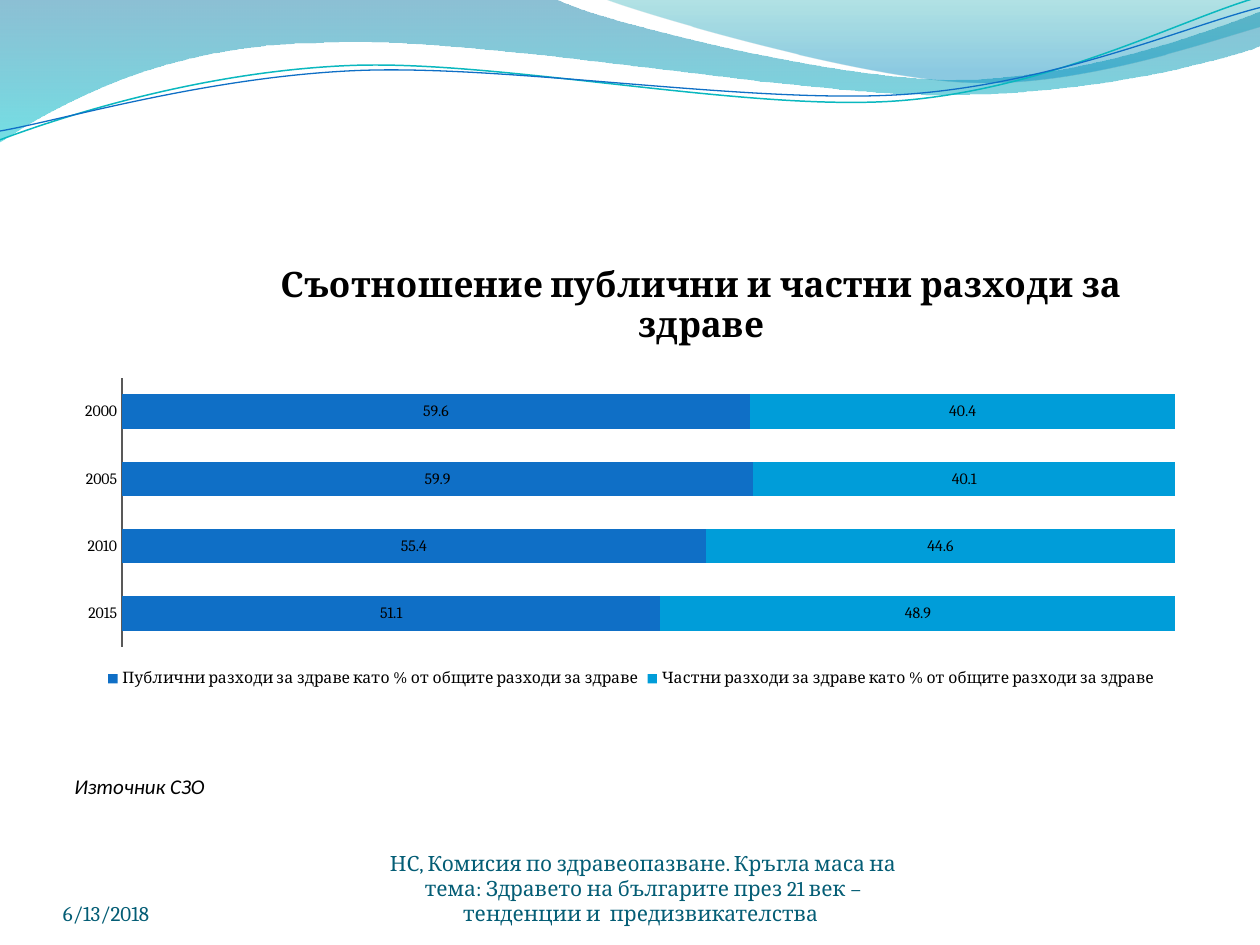
from math import cos, radians, sin

from lxml.etree import SubElement
from pptx import Presentation
from pptx.chart.data import CategoryChartData
from pptx.dml.color import RGBColor
from pptx.enum.chart import XL_CHART_TYPE, XL_LABEL_POSITION, XL_LEGEND_POSITION, XL_TICK_LABEL_POSITION, XL_TICK_MARK
from pptx.enum.text import MSO_ANCHOR, PP_ALIGN
from pptx.oxml import parse_xml
from pptx.oxml.ns import nsdecls, qn
from pptx.util import Inches, Pt

WIDTH, HEIGHT = 10, 7.5
BLACK, TEAL = "000000", "045D75"
SOURCE = "Източник СЗО"
FOOTERS = [
    ("6/13/2018", 0.05, 0.233, PP_ALIGN.LEFT),
    ("НС, Комисия по здравеопазване. Кръгла маса на тема: Здравето на българите "
     "през 21 век – тенденции и  предизвикателства ", 0.292, 0.437, PP_ALIGN.CENTER),
]
CHART_TITLE = "Съотношение публични и частни разходи за здраве"
YEARS = ["2000", "2005", "2010", "2015"]
SERIES = [
    ("Публични разходи за здраве като % от общите разходи за здраве", "0F6FC6", [59.6, 59.9, 55.4, 51.1]),
    ("Частни разходи за здраве като % от общите разходи за здраве", "009DD9", [40.4, 40.1, 44.6, 48.9]),
]
TITLE_PLACE = {"x": 0.186, "y": 0.007}
PLOT_PLACE = {"x": 0.052, "y": 0.286, "w": 0.928, "h": 0.61}
BANDS = [
    ([(0, -0.01), (4.4, -0.01), (4.76, 0.17, 6.64, 0.63, 7.58, 0.63), (8.53, 0.63, 9.58, 0.26, 10, 0.09),
      (10.01, 0.36), (9.83, 0.44, 8.7, 0.76, 7.46, 0.75), (6.22, 0.75, 3.82, 0.28, 2.57, 0.34),
      (1.29, 0.35, 0.46, 0.83, -0.01, 1.13)],
     [(0, "0074A1", 45), (1, "00C6CF", 55)]),
    ([(4.79, -0.01), (5.09, 0.11, 6.82, 0.62, 7.69, 0.65), (8.56, 0.69, 9.61, 0.32, 10, 0.21), (10, 0)],
     [(0, "00A1A9", 30), (0.8, "008BBF", 45)]),
]
WAVE_TILT = -2.7
WAVES = [
    ([(0, 1.11), (0.48, 0.93, 1.58, 0.57, 2.77, 0.52), (3.95, 0.47, 5.93, 0.89, 7.13, 0.8),
      (8.33, 0.71, 9.38, 0.15, 9.98, -0.02)], (4.99, 0.575), "0AB8BF", 0.85),
    ([(0, 1.04), (0.47, 0.96, 1.64, 0.61, 2.83, 0.56), (4.03, 0.51, 5.97, 0.83, 7.17, 0.75),
      (8.36, 0.67, 9.41, 0.21, 10, 0.06)], (4.995, 0.59), "0F6FC6", 0.75),
]


def color(code):
    """Turn a hex string into a colour."""
    return RGBColor.from_string(code)


def apply(target, values):
    """Set attributes from a dict."""
    for name, value in values.items():
        setattr(target, name, value)


def style(font, size, name, code, **extra):
    """Format a font."""
    apply(font, {"size": Pt(size), "name": name, **extra})
    font.color.rgb = color(code)


def turn(point, center, degrees):
    """Rotate a point clockwise about a center."""
    angle = radians(degrees)
    x, y = point[0] - center[0], point[1] - center[1]
    return center[0] + x * cos(angle) - y * sin(angle), center[1] + x * sin(angle) + y * cos(angle)


def add_outline(page, steps, close, center=(0, 0), tilt=0):
    """Draw a freeform of straight and cubic steps, tilted about its center."""
    points = [turn(step[i:i + 2], center, -tilt) for step in steps for i in range(0, len(step), 2)]
    points = [(Inches(x), Inches(y)) for x, y in points]
    builder = page.shapes.build_freeform(*points[0], scale=1.0)
    builder.add_line_segments(points[1:], close=close)
    shape = builder.convert_to_shape()
    shape.shadow.inherit = False
    shape.rotation = tilt
    lines = iter(list(shape._element.iter(qn("a:lnTo"))))
    for step in steps[1:]:
        if len(step) == 2:
            next(lines)
            continue
        trio = [next(lines) for _ in range(3)]
        curve = parse_xml(f'<a:cubicBezTo {nsdecls("a")}/>')
        trio[0].addprevious(curve)
        for line in trio:
            curve.append(line[0])
            line.getparent().remove(line)
    return shape


def add_band(page, steps, stops):
    """Draw a translucent gradient band."""
    shape = add_outline(page, steps, True)
    shape.line.fill.background()
    shape.fill.gradient()
    shape.fill.gradient_angle = 270
    for stop, (position, code, _) in zip(shape.fill.gradient_stops, stops):
        stop.position = position
        stop.color.rgb = color(code)
    tints = list(shape._element.spPr.iter(qn("a:srgbClr")))
    for tint, (_, _, opacity) in zip(tints, stops):
        SubElement(tint, qn("a:alpha")).set("val", str(opacity * 1000))


def add_wave(page, steps, center, code, width):
    """Draw a thin curved line."""
    shape = add_outline(page, steps, False, center, WAVE_TILT)
    shape.fill.background()
    shape.line.color.rgb = color(code)
    shape.line.width = Pt(width)


def write(box, text, align, code, font_name, **extra):
    """Fill a box with one bottom-anchored paragraph."""
    frame = box.text_frame
    apply(frame, {"word_wrap": True, "vertical_anchor": MSO_ANCHOR.BOTTOM, "margin_left": 0,
                  "margin_right": 0, "margin_top": 0, "margin_bottom": 0})
    para = frame.paragraphs[0]
    para.alignment = align
    span = para.add_run()
    span.text = text
    style(span.font, 12, font_name, code, **extra)


def place(parent, values, inner=False):
    """Give a chart part a manual layout."""
    modes = '<c:layoutTarget val="inner"/>' if inner else ""
    modes += '<c:xMode val="edge"/><c:yMode val="edge"/>'
    sizes = "".join(f'<c:{key} val="{value}"/>' for key, value in values.items())
    layout = parse_xml(f'<c:layout {nsdecls("c")}><c:manualLayout>{modes}{sizes}</c:manualLayout></c:layout>')
    for old in parent.findall(qn("c:layout")):
        parent.remove(old)
    text = parent.find(qn("c:tx"))
    parent.insert(0 if text is None else 1, layout)


def add_spending_chart(page):
    """Add the stacked bars of public and private spending."""
    data = CategoryChartData(number_format="0.0")
    data.categories = YEARS
    for name, _, values in SERIES:
        data.add_series(name, values)
    area = [Inches(value) for value in (0.5, 2, 9.01, 3.5)]
    chart = page.shapes.add_chart(XL_CHART_TYPE.BAR_STACKED_100, *area, data).chart
    style(chart.font, 9, "Cambria", BLACK)

    chart.has_title = True
    span = chart.chart_title.text_frame.paragraphs[0].add_run()
    span.text = CHART_TITLE
    style(span.font, 20, "Cambria", BLACK, bold=True)
    chart.chart_title.include_in_layout = False
    place(chart.chart_title._element, TITLE_PLACE)

    chart.has_legend = True
    apply(chart.legend, {"position": XL_LEGEND_POSITION.BOTTOM, "include_in_layout": False})
    style(chart.legend.font, 9, "Cambria", BLACK)
    apply(chart.category_axis, {"reverse_order": True, "major_tick_mark": XL_TICK_MARK.NONE,
                                "minor_tick_mark": XL_TICK_MARK.NONE,
                                "tick_label_position": XL_TICK_LABEL_POSITION.NEXT_TO_AXIS})
    chart.category_axis.format.line.color.rgb = color("595959")
    apply(chart.value_axis, {"visible": False, "has_major_gridlines": False})

    plot = chart.plots[0]
    apply(plot, {"gap_width": 95, "overlap": 100, "vary_by_categories": False})
    for series, (_, code, _) in zip(plot.series, SERIES):
        series.format.fill.solid()
        series.format.fill.fore_color.rgb = color(code)
        labels = series.data_labels
        apply(labels, {"show_value": True, "position": XL_LABEL_POSITION.CENTER})
        style(labels.font, 9, "Cambria", BLACK)
    place(chart._chartSpace.chart.plotArea, PLOT_PLACE, inner=True)


def main():
    """Build the slide and save it."""
    deck = Presentation()
    apply(deck, {"slide_width": Inches(WIDTH), "slide_height": Inches(HEIGHT)})
    page = deck.slides.add_slide(deck.slide_layouts[5])
    for band in BANDS:
        add_band(page, *band)
    for wave in WAVES:
        add_wave(page, *wave)
    title = page.shapes.title
    apply(title, {"left": Inches(0.59), "top": Inches(5.09), "width": Inches(9.08), "height": Inches(1.25)})
    write(title, SOURCE, PP_ALIGN.LEFT, BLACK, "Calibri", italic=True)
    add_spending_chart(page)
    for text, left, width, align in FOOTERS:
        box = page.shapes.add_textbox(Inches(left * WIDTH), Inches(6.95), Inches(width * WIDTH), Inches(0.4))
        write(box, text, align, TEAL, "Cambria")
    deck.save("out.pptx")


if __name__ == "__main__":
    main()
